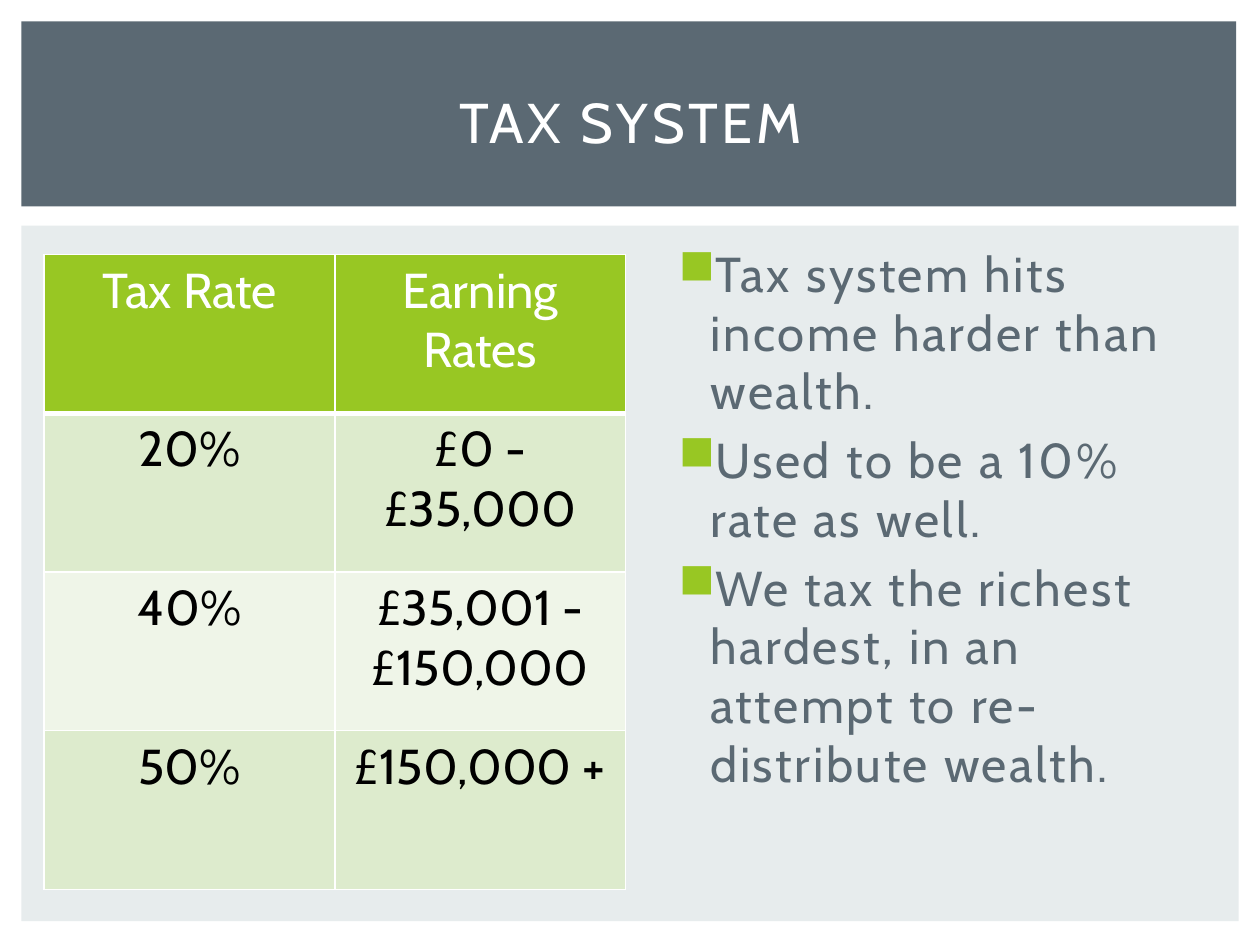
import pptx
import pptx.util
import pptx.oxml
import pptx.oxml.ns
from pptx.dml.color import RGBColor
from pptx.enum.shapes import MSO_SHAPE
from pptx.enum.text import MSO_ANCHOR, PP_ALIGN
from pptx.util import Cm, Pt

# Content
TITLE = "TAX SYSTEM"
ROWS = [
    ("Tax Rate", "Earning Rates"),
    ("20%", "£0 - £35,000"),
    ("40%", "£35,001 - £150,000"),
    ("50%", "£150,000 +"),
]
POINTS = [
    "Tax system hits income harder than wealth.",
    "Used to be a 10% rate as well.",
    "We tax the richest hardest, in an attempt to re-distribute wealth.",
]

# Style
FONT = "Cabin"
SLATE = RGBColor(0x5B, 0x69, 0x73)
PALE = RGBColor(0xE7, 0xEC, 0xED)
GREEN = RGBColor(0x98, 0xC7, 0x23)
BAND_DARK = RGBColor(0xDD, 0xEB, 0xCD)
BAND_LIGHT = RGBColor(0xEF, 0xF5, 0xE8)
WHITE = RGBColor(0xFF, 0xFF, 0xFF)
BLACK = RGBColor(0, 0, 0)
COL_W, ROW_H = Cm(5.86), Cm(3.2)
NS = pptx.oxml.ns.nsdecls("a")


def add_run(p, text, size, color, spacing=0):
    r = p.add_run()
    r.text = text
    r.font.name, r.font.size = FONT, Pt(size)
    r.font.color.rgb = color
    if spacing:
        r.font._element.set("spc", str(int(spacing * 100)))


def add_panel(s, color, *box):
    sp = s.shapes.add_shape(MSO_SHAPE.RECTANGLE, *box)
    sp.shadow.inherit = False
    sp.fill.solid()
    sp.fill.fore_color.rgb = color
    sp.line.fill.background()


def set_borders(cell, widths):
    tcPr = cell._tc.get_or_add_tcPr()
    for i, (side, width) in enumerate(widths.items()):
        tcPr.insert(i, pptx.oxml.parse_xml(
            f'<a:ln{side} {NS} w="{Pt(width)}"><a:solidFill>'
            f'<a:srgbClr val="{WHITE}"/></a:solidFill></a:ln{side}>'))


def add_bullet(p):
    pPr = p._p.get_or_add_pPr()
    pPr.set("marL", str(Cm(0.76)))
    pPr.set("indent", str(Cm(-0.64)))
    for xml in (f'<a:buClr {NS}><a:srgbClr val="{GREEN}"/></a:buClr>',
                f'<a:buChar {NS} char="■"/>'):
        pPr.append(pptx.oxml.parse_xml(xml))


prs = pptx.Presentation()
prs.slide_width, prs.slide_height = Cm(25.4), Cm(19.05)
s = prs.slides.add_slide(prs.slide_layouts[5])

# Background panels
add_panel(s, PALE, Cm(0.43), Cm(4.55), Cm(24.54), Cm(14.02))
add_panel(s, SLATE, Cm(0.43), Cm(0.43), Cm(24.49), Cm(3.73))

# Title, brought in front of its panel
title = s.shapes.title
title.left, title.top, title.width, title.height = Cm(1.07), Cm(0.99), Cm(23.29), Cm(2.92)
title.element.getparent().append(title.element)
tf = title.text_frame
tf.vertical_anchor = MSO_ANCHOR.MIDDLE
p = tf.paragraphs[0]
p.alignment = PP_ALIGN.CENTER
add_run(p, TITLE, 32, WHITE, 2)

# Tax table
table = s.shapes.add_table(len(ROWS), 2, Cm(0.89), Cm(5.13),
                           COL_W * 2, ROW_H * len(ROWS)).table
for col in table.columns:
    col.width = COL_W
for i, row in enumerate(ROWS):
    table.rows[i].height = ROW_H
    fill = GREEN if i == 0 else BAND_DARK if i % 2 else BAND_LIGHT
    for j, text in enumerate(row):
        cell = table.cell(i, j)
        cell.fill.solid()
        cell.fill.fore_color.rgb = fill
        set_borders(cell, {"L": 1, "R": 1, "T": 3 if i == 1 else 1, "B": 3 if i == 0 else 1})
        p = cell.text_frame.paragraphs[0]
        p.alignment = PP_ALIGN.CENTER
        add_run(p, text, 28, BLACK if i else WHITE)
        p.runs[0].font.bold = False

# Bullet points
tf = s.shapes.add_textbox(Cm(13.31), Cm(4.78), Cm(11.13), Cm(13.16)).text_frame
tf.word_wrap = True
for i, text in enumerate(POINTS):
    p = tf.add_paragraph() if i else tf.paragraphs[0]
    p.space_before = Pt(5.6)
    add_bullet(p)
    add_run(p, text, 28, SLATE, 1.5)

prs.save("out.pptx")
